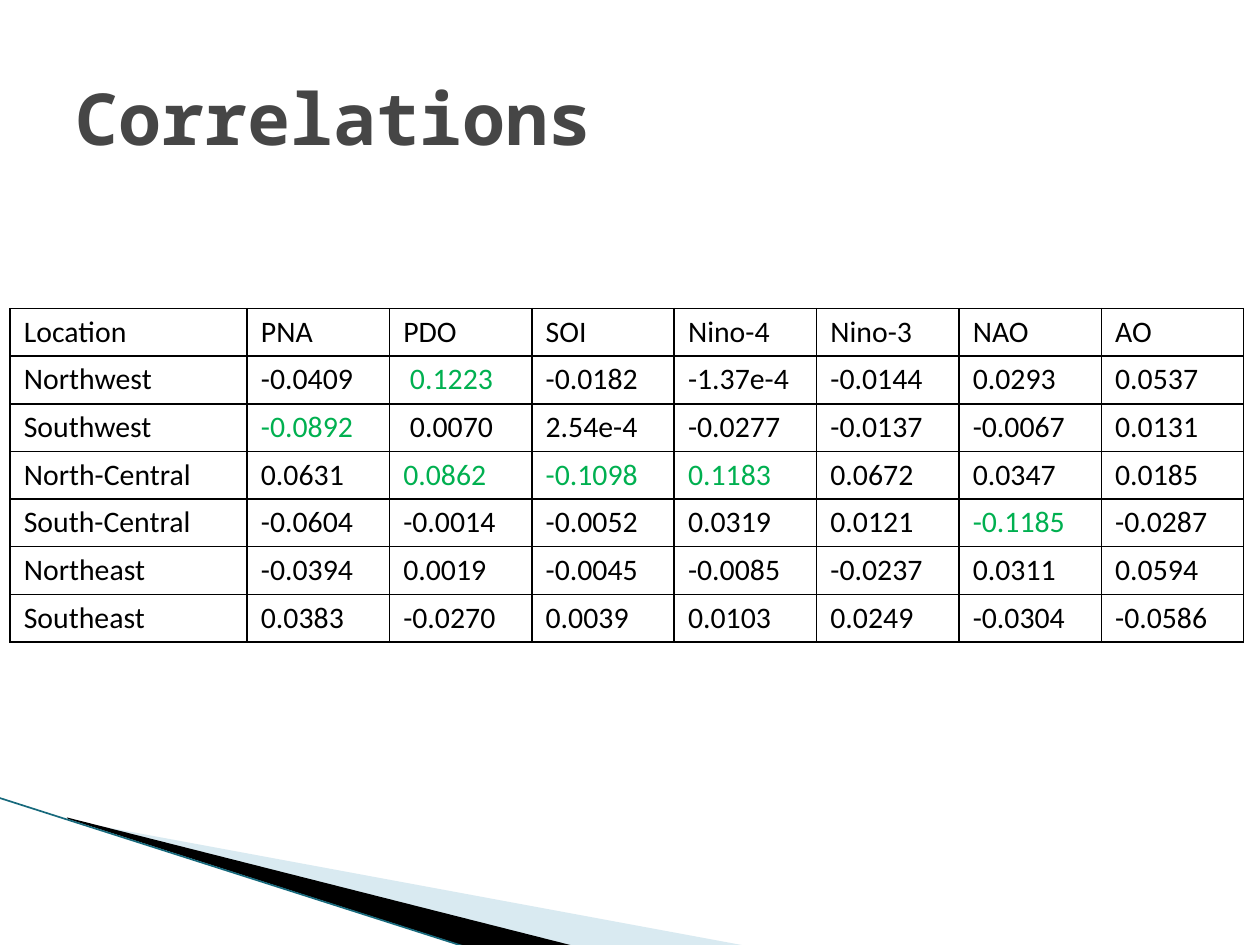
"""Build a slide with a table of correlations between regions and climate indices."""
import pptx
import pptx.util
import pptx.dml.color
import pptx.enum.shapes
import pptx.enum.text
import pptx.oxml
import pptx.oxml.ns
from pptx.util import Cm

COLOURS = {
    "title": "464646",
    "text": "000000",
    "significant": "00B050",
    "border": "000000",
    "pale wedge": "A0CBDC",
    "dark wedge": "000000",
    "edge": "17697C",
}
TITLE = "Correlations"
INDICES = ["Location", "PNA", "PDO", "SOI", "Nino-4", "Nino-3", "NAO", "AO"]
REGIONS = [
    ["Northwest", "-0.0409", " 0.1223", "-0.0182", "-1.37e-4", "-0.0144", "0.0293", "0.0537"],
    ["Southwest", "-0.0892", " 0.0070", "2.54e-4", "-0.0277", "-0.0137", "-0.0067", "0.0131"],
    ["North-Central", "0.0631", "0.0862", "-0.1098", "0.1183", "0.0672", "0.0347", "0.0185"],
    ["South-Central", "-0.0604", "-0.0014", "-0.0052", "0.0319", "0.0121", "-0.1185", "-0.0287"],
    ["Northeast", "-0.0394", "0.0019", "-0.0045", "-0.0085", "-0.0237", "0.0311", "0.0594"],
    ["Southeast", "0.0383", "-0.0270", "0.0039", "0.0103", "0.0249", "-0.0304", "-0.0586"],
]
SIGNIFICANT = {
    ("Northwest", "PDO"),
    ("Southwest", "PNA"),
    ("North-Central", "PDO"),
    ("North-Central", "SOI"),
    ("North-Central", "Nino-4"),
    ("South-Central", "NAO"),
}
WEDGES = [
    ("pale wedge", 40, [(1.4, 16.54), (15.11, 19.08), (11.58, 19.08), (1.4, 16.51)]),
    ("dark wedge", 100, [(1.35, 16.48), (11.61, 19.08), (9.45, 19.1), (1.37, 16.51)]),
]
EDGE = (-0.03, 16.08, 9.42, 19.1)
LOCATION_WIDTH, INDEX_WIDTH, ROW_HEIGHT = 4.78, 2.87, 0.96


def rgb(name):
    return pptx.dml.color.RGBColor.from_string(COLOURS[name])


def add_wedge(slide, colour, opacity, corners):
    start, *others = [(Cm(x), Cm(y)) for x, y in corners]
    outline = slide.shapes.build_freeform(*start)
    outline.add_line_segments(others, close=True)
    wedge = outline.convert_to_shape()
    wedge.shadow.inherit = False
    wedge.line.fill.background()
    wedge.fill.solid()
    wedge.fill.fore_color.rgb = rgb(colour)
    if opacity < 100:
        hue = wedge.fill._xPr.find(".//" + pptx.oxml.ns.qn("a:srgbClr"))
        hue.append(pptx.oxml.parse_xml(
            f'<a:alpha {pptx.oxml.ns.nsdecls("a")} val="{opacity * 1000}"/>'))


def add_edge(slide):
    edge = slide.shapes.add_connector(
        pptx.enum.shapes.MSO_CONNECTOR.STRAIGHT, *map(Cm, EDGE))
    edge.line.color.rgb = rgb("edge")
    edge.line.width = pptx.util.Pt(0.95)
    edge._element.spPr.append(
        pptx.oxml.parse_xml(f'<a:effectLst {pptx.oxml.ns.nsdecls("a")}/>'))


def add_borders(cell):
    properties = cell._tc.get_or_add_tcPr()
    for position, side in enumerate(("lnL", "lnR", "lnT", "lnB")):
        properties.insert(position, pptx.oxml.parse_xml(
            f'<a:{side} {pptx.oxml.ns.nsdecls("a")} w="12700"><a:solidFill>'
            f'<a:srgbClr val="{COLOURS["border"]}"/></a:solidFill></a:{side}>'))


def fill_cell(cell, value, colour):
    cell.margin_left = cell.margin_right = Cm(0.28)
    cell.margin_top = cell.margin_bottom = 0
    cell.fill.background()
    add_borders(cell)
    cell.text = value
    paragraph = cell.text_frame.paragraphs[0]
    paragraph.line_spacing = 1.15
    paragraph.font.name = "Calibri"
    paragraph.font.size = pptx.util.Pt(17)
    paragraph.font.bold = False
    paragraph.font.color.rgb = rgb(colour)


def add_correlations(slide):
    rows = [INDICES] + REGIONS
    width = LOCATION_WIDTH + INDEX_WIDTH * (len(INDICES) - 1)
    correlations = slide.shapes.add_table(
        len(rows), len(INDICES), Cm(0.2), Cm(6.22),
        Cm(width), Cm(ROW_HEIGHT * len(rows))).table
    correlations.first_row = correlations.horz_banding = False
    for position, column in enumerate(correlations.columns):
        column.width = Cm(INDEX_WIDTH if position else LOCATION_WIDTH)
    for row, values in zip(correlations.rows, rows):
        row.height = Cm(ROW_HEIGHT)
        for cell, index, value in zip(row.cells, INDICES, values):
            marked = (values[0], index) in SIGNIFICANT
            fill_cell(cell, value, "significant" if marked else "text")


def add_title(slide):
    title = slide.shapes.add_textbox(Cm(1.27), Cm(0.76), Cm(22.86), Cm(3.18)).text_frame
    title.word_wrap = True
    title.vertical_anchor = pptx.enum.text.MSO_ANCHOR.MIDDLE
    title.text = TITLE
    font = title.paragraphs[0].font
    font.name = "Noto Sans Mono"
    font.size = pptx.util.Pt(41)
    font.bold = True
    font.color.rgb = rgb("title")


def main():
    deck = pptx.Presentation()
    deck.slide_width, deck.slide_height = Cm(25.4), Cm(19.05)
    slide = deck.slides.add_slide(deck.slide_layouts[6])
    for wedge in WEDGES:
        add_wedge(slide, *wedge)
    add_edge(slide)
    add_correlations(slide)
    add_title(slide)
    deck.save("out.pptx")


if __name__ == "__main__":
    main()
